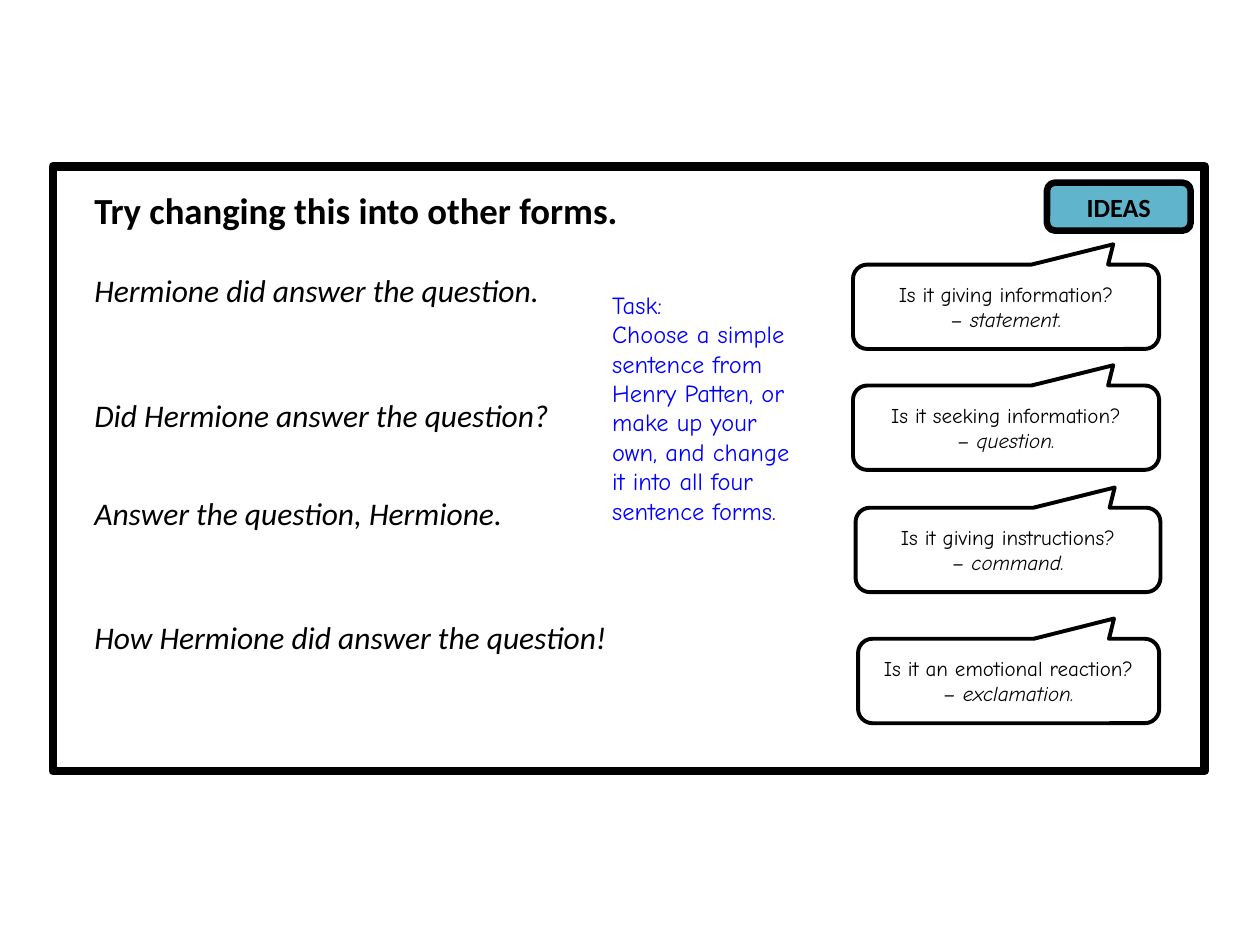
import pptx
import pptx.util
import pptx.dml.color
import pptx.enum.shapes
import pptx.enum.text

Inches = pptx.util.Inches
Kind = pptx.enum.shapes.MSO_SHAPE
Align = pptx.enum.text.PP_ALIGN
Anchor = pptx.enum.text.MSO_ANCHOR

hues = {"ink": "000000", "paper": "FFFFFF", "badge": "60B5CC", "task": "0000FF"}
title = {"name": "Calibri", "size": 21, "bold": True}
label = {"name": "Calibri", "size": 15, "bold": True}
model = {"name": "Calibri", "size": 18, "italic": True}
hint = {"name": "Comic Neue", "size": 12}
task = {"name": "Comic Neue", "size": 14}

deck = pptx.Presentation()
deck.slide_width = Inches(10)
deck.slide_height = Inches(7.5)
slide = deck.slides.add_slide(deck.slide_layouts[6])


def write(item, rows, hue="ink", align=Align.LEFT, anchor=Anchor.TOP):
    frame = item.text_frame
    frame.word_wrap = True
    frame.vertical_anchor = anchor
    for i, row in enumerate(rows):
        para = frame.add_paragraph() if i else frame.paragraphs[0]
        para.alignment = align
        for text, style in row:
            run = para.add_run()
            run.text = text
            run.font.color.rgb = pptx.dml.color.RGBColor.from_string(hues[hue])
            for key, value in style.items():
                setattr(run.font, key, pptx.util.Pt(value) if key == "size" else value)


def draw(kind, box, width, fill=None):
    shape = slide.shapes.add_shape(kind, *map(Inches, box))
    shape.shadow.inherit = False
    shape.line.width = pptx.util.Pt(width)
    shape.line.color.rgb = pptx.dml.color.RGBColor.from_string(hues["ink"])
    if fill:
        shape.fill.solid()
        shape.fill.fore_color.rgb = pptx.dml.color.RGBColor.from_string(hues[fill])
    else:
        shape.fill.background()
    return shape


draw(Kind.RECTANGLE, (0.42, 1.32, 9.14, 4.8), 5)

notes = [
    (0.65, 1.44, 8.7, 0.45, "Try changing this into other forms.", title),
    (0.65, 2.1, 4.38, 0.4, "Hermione did answer the question.", model),
    (0.65, 3.09, 4.38, 0.4, "Did Hermione answer the question?", model),
    (0.65, 3.87, 4.38, 0.4, "Answer the question, Hermione.", model),
    (0.65, 4.86, 4.38, 0.4, "How Hermione did answer the question!", model),
]
for *box, text, style in notes:
    write(slide.shapes.add_textbox(*map(Inches, box)), [[(text, style)]])

hints = [
    (6.77, 2.1, 2.43, "Is it giving information?", "statement."),
    (6.77, 3.06, 2.43, "Is it seeking information?", "question."),
    (6.79, 4.03, 2.42, "Is it giving instructions?", "command."),
    (6.81, 5.07, 2.39, "Is it an emotional reaction?", "exclamation."),
]
for left, top, width, ask, form in hints:
    bubble = draw(Kind.ROUNDED_RECTANGULAR_CALLOUT, (left, top, width, 0.67), 2.25, "paper")
    for i, value in enumerate((0.35, -0.74, 0.17)):
        bubble.adjustments[i] = value
    rows = [[(ask, hint)], [("– ", hint), (form, {**hint, "italic": True})]]
    write(bubble, rows, align=Align.CENTER, anchor=Anchor.MIDDLE)

badge = draw(Kind.ROUNDED_RECTANGLE, (8.31, 1.45, 1.14, 0.38), 3.78, "badge")
write(badge, [[("IDEAS", label)]], align=Align.CENTER, anchor=Anchor.MIDDLE)

brief = slide.shapes.add_textbox(*map(Inches, (4.76, 2.25, 1.68, 1.99)))
lines = [
    "Task:",
    "Choose a simple sentence from Henry Patten, or make up your own, "
    "and change it into all four sentence forms.",
]
write(brief, [[(line, task)] for line in lines], "task")

deck.save("out.pptx")
